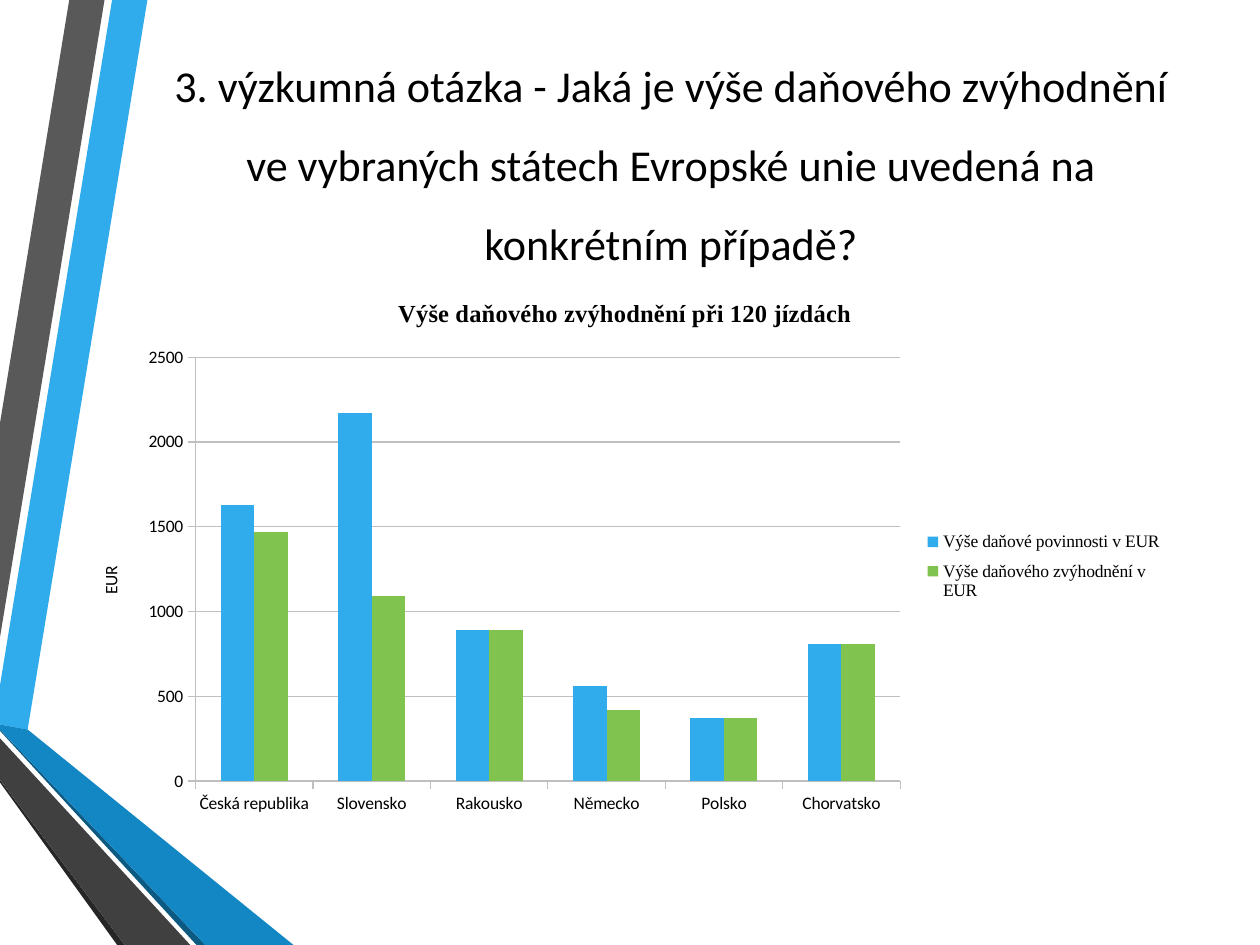
from dataclasses import dataclass

from lxml.etree import SubElement
from pptx import Presentation
from pptx.chart.data import CategoryChartData
from pptx.dml.color import RGBColor
from pptx.enum.chart import XL_CHART_TYPE as ChartType, XL_LEGEND_POSITION as LegendPosition
from pptx.enum.chart import XL_TICK_MARK as TickMark
from pptx.enum.text import MSO_ANCHOR as Anchor, MSO_AUTO_SIZE as AutoSize, PP_ALIGN as Align
from pptx.oxml.ns import qn
from pptx.util import Pt

PX = 9144

BLACK = RGBColor(0x00, 0x00, 0x00)
BLUE = RGBColor(0x30, 0xAC, 0xEC)
MID_BLUE = RGBColor(0x12, 0x87, 0xC3)
DEEP_BLUE = RGBColor(0x0C, 0x5A, 0x82)
GREEN = RGBColor(0x80, 0xC3, 0x4F)
GRAY = RGBColor(0x59, 0x59, 0x59)
DARK_GRAY = RGBColor(0x40, 0x40, 0x40)
CHARCOAL = RGBColor(0x26, 0x26, 0x26)
GRID_GRAY = RGBColor(0xBF, 0xBF, 0xBF)

SANS = "Calibri"
SERIF = "Times New Roman"


@dataclass(frozen=True)
class Ribbon:
    color: RGBColor
    points: tuple[tuple[int, int], ...]


@dataclass(frozen=True)
class Series:
    name: str
    values: tuple[int, ...]
    color: RGBColor


RIBBONS = (
    Ribbon(BLUE, ((0, 544), (0, 575), (22, 579), (117, 0), (89, 0))),
    Ribbon(GRAY, ((83, 0), (55, 0), (0, 336), (0, 506))),
    Ribbon(CHARCOAL, ((0, 619), (0, 621), (93, 750), (99, 750))),
    Ribbon(DEEP_BLUE, ((0, 579), (0, 580), (156, 750), (163, 750))),
    Ribbon(MID_BLUE, ((0, 579), (163, 750), (233, 750), (22, 579), (0, 575))),
    Ribbon(DARK_GRAY, ((0, 619), (99, 750), (151, 750), (0, 586))),
)
COUNTRIES = ("Česká republika", "Slovensko", "Rakousko", "Německo", "Polsko", "Chorvatsko")
SERIES = (
    Series("Výše daňové povinnosti v EUR", (1630, 2170, 890, 560, 370, 810), BLUE),
    Series("Výše daňového zvýhodnění v EUR", (1470, 1090, 890, 420, 370, 810), GREEN),
)


def style_font(font, name: str, size: float, bold: bool = False) -> None:
    font.name = name
    font.size = Pt(size)
    font.bold = bold
    font.color.rgb = BLACK


def draw_ribbon(shapes, ribbon: Ribbon) -> None:
    start, *rest = ribbon.points
    builder = shapes.build_freeform(*start, scale=PX)
    builder.add_line_segments(rest, close=True)
    band = builder.convert_to_shape()
    band.shadow.inherit = False
    band.fill.solid()
    band.fill.fore_color.rgb = ribbon.color
    band.line.fill.background()


def write_title(heading, text: str) -> None:
    heading.left, heading.top, heading.width, heading.height = (
        value * PX for value in (114, 21, 837, 197)
    )
    frame = heading.text_frame
    frame.text = text
    frame.word_wrap = True
    frame.auto_size = AutoSize.NONE
    frame.vertical_anchor = Anchor.MIDDLE
    paragraph = frame.paragraphs[0]
    paragraph.alignment = Align.CENTER
    paragraph.line_spacing = 1.5
    style_font(paragraph.runs[0].font, SANS, 25.2)


def place_part(part, index: int, target: str | None, **fractions: float) -> None:
    for previous in part.findall(qn("c:layout")):
        part.remove(previous)
    layout = SubElement(part, qn("c:layout"))
    part.insert(index, layout)
    manual = SubElement(layout, qn("c:manualLayout"))
    settings = {"layoutTarget": target} if target else {}
    settings |= {"xMode": "edge", "yMode": "edge"} | fractions
    for tag, value in settings.items():
        SubElement(manual, qn(f"c:{tag}")).set("val", str(value))


def label(title_owner, text: str, font_name: str, size: float, bold: bool) -> None:
    frame = title_owner.text_frame
    frame.text = text
    style_font(frame.paragraphs[0].runs[0].font, font_name, size, bold)


def draw_chart(shapes) -> None:
    data = CategoryChartData(number_format="General")
    data.categories = COUNTRIES
    for series in SERIES:
        data.add_series(series.name, series.values)
    bounds = (value * PX for value in (59, 218, 874, 437))
    chart = shapes.add_chart(ChartType.COLUMN_CLUSTERED, *bounds, data).chart
    style_font(chart.font, SANS, 10)

    chart.has_title = True
    label(chart.chart_title, "Výše daňového zvýhodnění při 120 jízdách", SERIF, 14, True)

    plot = chart.plots[0]
    plot.gap_width = 150
    plot.overlap = 0
    plot.vary_by_categories = False
    for bars, series in zip(plot.series, SERIES):
        bars.format.fill.solid()
        bars.format.fill.fore_color.rgb = series.color

    for axis in (chart.category_axis, chart.value_axis):
        axis.major_tick_mark = TickMark.OUTSIDE
        axis.minor_tick_mark = TickMark.NONE
        axis.format.line.color.rgb = GRID_GRAY
    values = chart.value_axis
    values.minimum_scale = 0
    values.maximum_scale = 2500
    values.major_unit = 500
    values.major_gridlines.format.line.color.rgb = GRID_GRAY
    values.has_title = True
    label(values.axis_title, "EUR", SANS, 10, False)

    chart.has_legend = True
    legend = chart.legend
    legend.position = LegendPosition.RIGHT
    legend.include_in_layout = False
    style_font(legend.font, SERIF, 10)

    plot_area = chart.element.find(f".//{qn('c:plotArea')}")
    place_part(plot_area, 0, "inner", x=0.11, y=0.15, w=0.64, h=0.77)
    legend_part = chart.element.find(f".//{qn('c:legend')}")
    place_part(legend_part, 1, None, x=0.77, y=0.45, w=0.22, h=0.16)


def main() -> None:
    presentation = Presentation()
    presentation.slide_width = 1000 * PX
    presentation.slide_height = 750 * PX
    slide = presentation.slides.add_slide(presentation.slide_layouts[5])
    shapes = slide.shapes
    for ribbon in RIBBONS:
        draw_ribbon(shapes, ribbon)
    heading = shapes.title
    heading.element.getparent().append(heading.element)
    write_title(
        heading,
        "3. výzkumná otázka - Jaká je výše daňového zvýhodnění ve vybraných státech "
        "Evropské unie uvedená na konkrétním případě?",
    )
    draw_chart(shapes)
    presentation.save("out.pptx")


if __name__ == "__main__":
    main()
